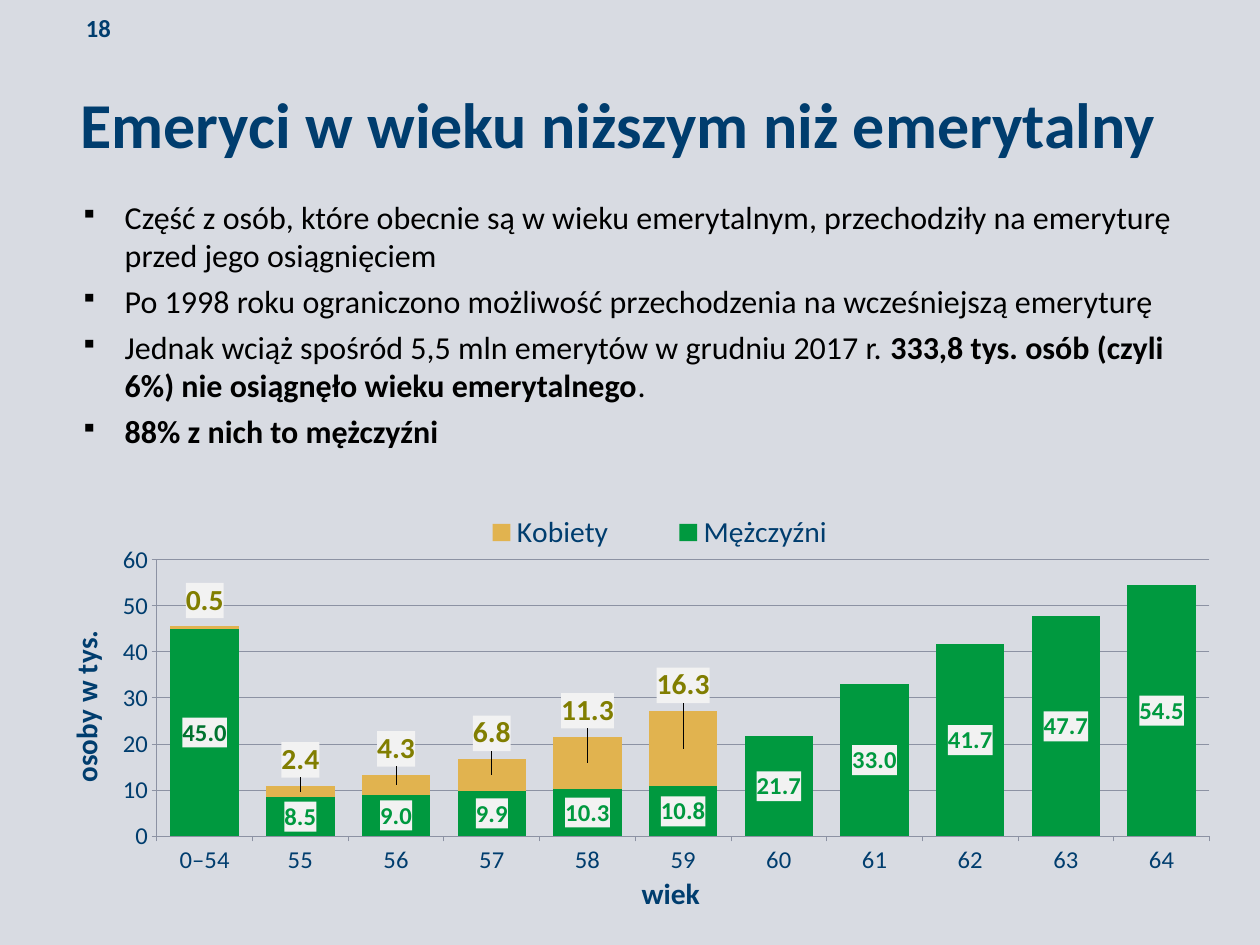
"""Build a slide on pensioners below retirement age."""
from copy import deepcopy

from pptx import Presentation
from pptx.chart.data import CategoryChartData as ChartData
from pptx.dml.color import RGBColor
from pptx.enum.chart import XL_CHART_TYPE as Kind
from pptx.enum.chart import XL_LEGEND_POSITION as Side
from pptx.enum.chart import XL_TICK_MARK as Tick
from pptx.enum.text import MSO_ANCHOR as Anchor
from pptx.enum.text import PP_ALIGN as Align
from pptx.oxml import parse_xml
from pptx.oxml.ns import nsdecls, qn
from pptx.util import Inches, Pt

NAVY = RGBColor(0x00, 0x3D, 0x6E)
BLACK = RGBColor(0x00, 0x00, 0x00)
PALE = RGBColor(0xD8, 0xDB, 0xE2)
GREY = RGBColor(0x8C, 0x92, 0xA3)
GREEN = RGBColor(0x00, 0x99, 0x3F)
DARK = RGBColor(0x00, 0x73, 0x2F)
GOLD = RGBColor(0xE1, 0xB3, 0x4F)
OLIVE = RGBColor(0x81, 0x7E, 0x01)
WHITE = RGBColor(0xF2, 0xF2, 0xF2)
FACE = "Calibri"

TITLE = "Emeryci w wieku niższym niż emerytalny"
POINTS = [
    [("Część z osób, które obecnie są w wieku emerytalnym, przechodziły "
      "na emeryturę przed jego osiągnięciem", False)],
    [("Po 1998 roku ograniczono możliwość przechodzenia na wcześniejszą "
      "emeryturę", False)],
    [("Jednak wciąż spośród 5,5 mln emerytów w grudniu 2017 r. ", False),
     ("333,8 tys. osób (czyli 6%) nie osiągnęło wieku emerytalnego", True),
     (".", False)],
    [("88% z nich to mężczyźni", True)],
]
AGES = ["0–54"] + [str(age) for age in range(55, 65)]
MEN = [45, 8.5, 9, 9.9, 10.3, 10.8, 21.7, 33, 41.7, 47.7, 54.5]
WOMEN = [0.5, 2.4, 4.3, 6.8, 11.3, 16.3]
SERIES = [("Mężczyźni", MEN, GREEN, GREEN, 20),
          ("Kobiety", WOMEN, GOLD, OLIVE, 24)]
TOP = 60
PLOT = (0.096, 0.113, 0.898, 0.692)


def style(font, size, color, bold=False):
    """Set the look of a font."""
    font.name, font.size, font.bold = FACE, Pt(size), bold
    font.color.rgb = color


def write(para, text, size, color, bold):
    """Add one styled run."""
    run = para.add_run()
    run.text = text
    style(run.font, size, color, bold)


def layout(x, y, w=None, h=None, inner=False, edge=True):
    """Make a manual chart layout."""
    parts = ['<c:layoutTarget val="inner"/>'] if inner else []
    if edge:
        parts += ['<c:xMode val="edge"/>', '<c:yMode val="edge"/>']
    for tag, val in zip("xywh", (x, y, w, h)):
        if val is not None:
            parts.append(f'<c:{tag} val="{val:.3f}"/>')
    return parse_xml(f'<c:layout {nsdecls("c")}><c:manualLayout>'
                     f'{"".join(parts)}</c:manualLayout></c:layout>')


def place(host, index, new):
    """Put a layout into a chart part at the given child index."""
    for old in host.findall(qn("c:layout")):
        host.remove(old)
    host.insert(index, new)


def label(series, color, size):
    """Style the value labels of a series and return their element."""
    labels = series.data_labels
    labels.show_value = True
    labels.number_format, labels.number_format_is_linked = "0.0", False
    style(labels.font, size, color, True)
    root = labels._element
    root.find(qn("c:numFmt")).addnext(parse_xml(
        f'<c:spPr {nsdecls("c", "a")}><a:solidFill><a:srgbClr val="{WHITE}"/>'
        '</a:solidFill></c:spPr>'))
    return root


def lift(root, values):
    """Move each label of a series above its bar."""
    shared = list(root)
    for i, val in enumerate(values):
        point = parse_xml(f'<c:dLbl {nsdecls("c")}><c:idx val="{i}"/></c:dLbl>')
        rise = val / 2 / TOP * PLOT[3] + 0.065
        point.append(layout(0, -rise, edge=False))
        for part in shared:
            point.append(deepcopy(part))
        root.insert(i, point)


def tint(root, color):
    """Give the first label of a series its own colour."""
    point = parse_xml(f'<c:dLbl {nsdecls("c")}><c:idx val="0"/></c:dLbl>')
    for part in list(root):
        point.append(deepcopy(part))
    for tone in point.find(qn("c:txPr")).iter(qn("a:srgbClr")):
        tone.set("val", str(color))
    root.insert(0, point)


def name_axis(axis, text, x, y):
    """Style an axis and add its title."""
    style(axis.tick_labels.font, 20, NAVY)
    axis.major_tick_mark, axis.minor_tick_mark = Tick.OUTSIDE, Tick.NONE
    axis.format.line.color.rgb, axis.format.line.width = GREY, Pt(0.75)
    title = axis.axis_title
    write(title.text_frame.paragraphs[0], text, 24, NAVY, True)
    place(title._element, 1, layout(x, y))


def add_points(slide):
    """Add the bullet list."""
    box = slide.shapes.add_textbox(Inches(0.81), Inches(2.18),
                                   Inches(12.6), Inches(3.39))
    frame = box.text_frame
    frame.word_wrap = True
    for i, runs in enumerate(POINTS):
        para = frame.add_paragraph() if i else frame.paragraphs[0]
        para.space_after = Pt(6)
        props = para._p.get_or_add_pPr()
        props.set("marL", str(Inches(0.5)))
        props.set("indent", str(Inches(-0.5)))
        for tag in ('buSzPct val="75000"', 'buChar char="▪"'):
            props.append(parse_xml(f'<a:{tag} {nsdecls("a")}/>'))
        for text, bold in runs:
            write(para, text, 26, BLACK, bold)


def add_chart(slide):
    """Add the stacked columns."""
    data = ChartData()
    data.categories = AGES
    for name, values, *_ in SERIES:
        data.add_series(name, values + [None] * (len(AGES) - len(values)))
    chart = slide.shapes.add_chart(Kind.COLUMN_STACKED, Inches(0.5),
                                   Inches(5.81), Inches(13.23),
                                   Inches(4.59), data).chart
    style(chart.font, 10, NAVY)
    chart.has_title = False
    plot = chart.plots[0]
    plot.gap_width, plot.overlap, plot.vary_by_categories = 40, 100, False
    roots = []
    for series, (_, _, fill, color, size) in zip(plot.series, SERIES):
        series.format.fill.solid()
        series.format.fill.fore_color.rgb = fill
        roots.append(label(series, color, size))
    tint(roots[0], DARK)
    lift(roots[1], WOMEN)

    name_axis(chart.category_axis, "wiek", 0.505, 0.885)
    axis = chart.value_axis
    name_axis(axis, "osoby w tys.", 0.014, 0.283)
    axis.minimum_scale, axis.maximum_scale, axis.major_unit = 0, TOP, 10
    axis.tick_labels.number_format = "#,##0"
    axis.tick_labels.number_format_is_linked = False
    axis.has_major_gridlines = True
    grid = axis.major_gridlines.format.line
    grid.color.rgb, grid.width = GREY, Pt(0.75)

    chart.has_legend = True
    legend = chart.legend
    legend.position, legend.include_in_layout = Side.RIGHT, False
    style(legend.font, 24, NAVY)
    place(legend._element, 1, layout(0.33, 0, 0.39, 0.09))
    area = chart._chartSpace.chart.plotArea
    place(area, 0, layout(*PLOT, inner=True))


def main():
    """Build and save the slide."""
    deck = Presentation()
    deck.slide_width, deck.slide_height = Inches(14.22), Inches(10.67)
    slide = deck.slides.add_slide(deck.slide_layouts[5])
    slide.background.fill.solid()
    slide.background.fill.fore_color.rgb = PALE

    title = slide.shapes.title
    title.left, title.top = Inches(0.81), Inches(0.92)
    title.width, title.height = Inches(12.6), Inches(0.94)
    title.text_frame.vertical_anchor = Anchor.MIDDLE
    head = title.text_frame.paragraphs[0]
    head.alignment = Align.LEFT
    write(head, TITLE, 52, NAVY, True)

    page = slide.shapes.add_textbox(Inches(0.91), Inches(0.09),
                                    Inches(0.85), Inches(0.45)).text_frame
    page.word_wrap, page.vertical_anchor = True, Anchor.MIDDLE
    page.margin_left = page.margin_right = Inches(0.06)
    write(page.paragraphs[0], "18", 20, NAVY, True)
    add_points(slide)
    add_chart(slide)
    deck.save("out.pptx")


if __name__ == "__main__":
    main()
